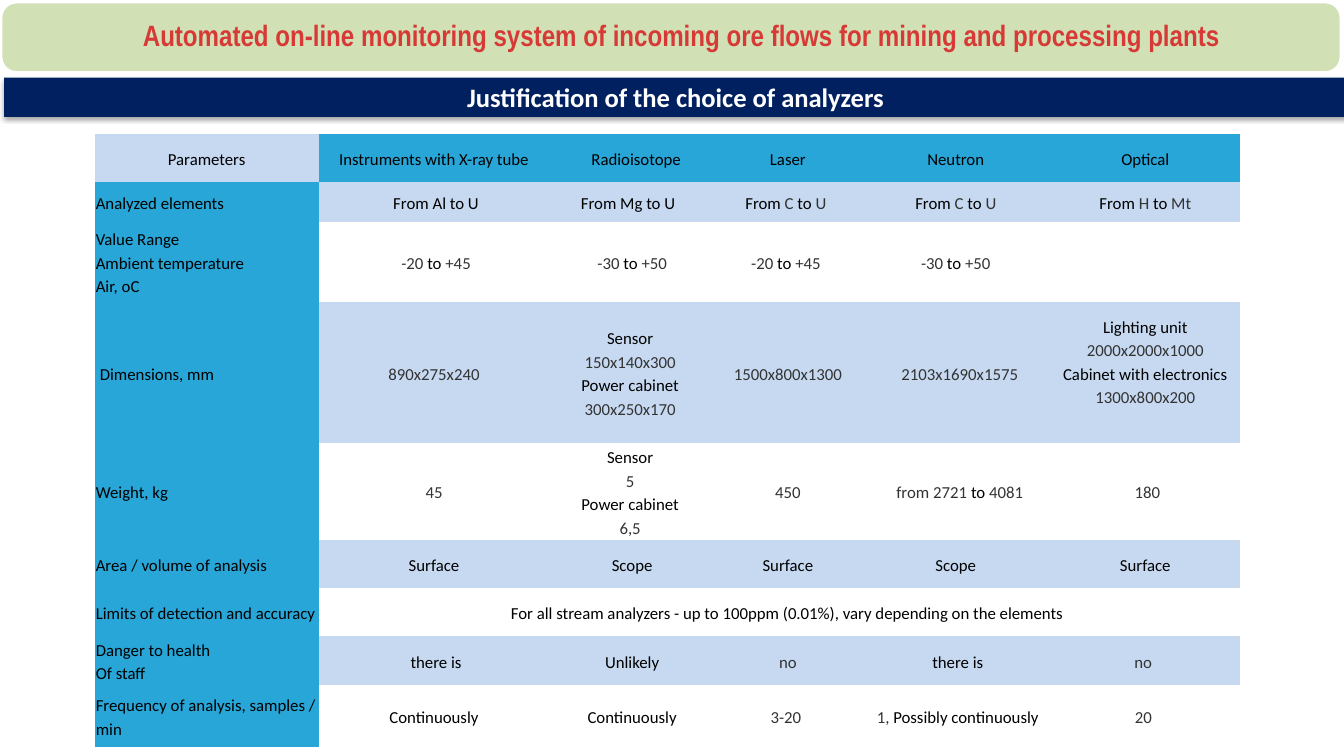
from lxml import etree
from pptx import Presentation
from pptx.dml.color import RGBColor
from pptx.enum.shapes import MSO_SHAPE
from pptx.enum.text import MSO_ANCHOR, PP_ALIGN
from pptx.oxml.ns import qn
from pptx.util import Inches, Pt

RECT, ROUND = MSO_SHAPE.RECTANGLE, MSO_SHAPE.ROUNDED_RECTANGLE
MIDDLE = MSO_ANCHOR.MIDDLE
LEFT, CENTER = PP_ALIGN.LEFT, PP_ALIGN.CENTER
NO_GRID = "{2D5ABB26-0587-4C30-8999-92F81FD0307C}"
COLORS = {
    "navy": "002060", "green": "D2E1B5", "red": "D73A36", "white": "FFFFFF",
    "blue": "28A6D7", "pale": "C6D9F1", "black": "000000", "grey": "333333",
}


def paint(fill, name):
    fill.solid()
    fill.fore_color.rgb = RGBColor.from_string(COLORS[name])


def add_run(para, text, size, color, font="Calibri", bold=False):
    run = para.add_run()
    run.text = text
    run.font.size, run.font.name, run.font.bold = Pt(size), font, bold
    run.font.color.rgb = RGBColor.from_string(COLORS[color])


prs = Presentation()
prs.slide_width, prs.slide_height = Inches(13.33), Inches(7.5)
slide = prs.slides.add_slide(prs.slide_layouts[5])
shapes = slide.shapes

# Section bar with a soft shadow below it
bar = shapes.add_shape(RECT, Inches(0.04), Inches(0.77), Inches(13.32), Inches(0.39))
bar.shadow.inherit = False
paint(bar.fill, "navy")
bar.line.fill.background()
glow = etree.SubElement(bar.element.spPr.find(qn("a:effectLst")), qn("a:outerShdw"),
                        blurRad=str(Pt(3.1)), dist=str(Pt(1.8)), dir="5400000",
                        rotWithShape="0")
tint = etree.SubElement(glow, qn("a:srgbClr"), val=COLORS["black"])
etree.SubElement(tint, qn("a:alpha"), val="35000")
frame = bar.text_frame
frame.word_wrap, frame.vertical_anchor = True, MIDDLE
frame.margin_top = frame.margin_bottom = Inches(0.06)
frame.paragraphs[0].alignment = CENTER
add_run(frame.paragraphs[0], "Justification of the choice of analyzers", 19, "white", bold=True)

# Title on its rounded banner
box = Inches(0.01), Inches(0.02), Inches(13.29), Inches(0.7)
banner = shapes.add_shape(ROUND, *box)
banner.adjustments[0] = 0.22
banner.shadow.inherit = False
paint(banner.fill, "green")
paint(banner.line.fill, "white")
banner.line.width = Pt(2)

title = shapes.title
banner.element.addnext(title.element)
title.left, title.top, title.width, title.height = box
frame = title.text_frame
frame.word_wrap, frame.vertical_anchor = True, MIDDLE
frame.margin_left = Inches(0.33)
frame.margin_top = frame.margin_right = frame.margin_bottom = Inches(0.12)
para = frame.paragraphs[0]
para.alignment, para.line_spacing = CENTER, 0.9
add_run(para, "Automated on-line monitoring system of incoming ore flows "
        "for mining and processing plants", 21, "red", "Arial Narrow", True)

# Table text: *grey* words stand between stars,
# and each outer underscore widens that side's cell margin by one step
STEP = 0.04
WIDTHS = [2.22, 2.29, 1.6, 1.49, 1.88, 1.88]
HEIGHTS = [0.48, 0.39, 0.8, 1.4, 0.94, 0.48, 0.48, 0.48, 0.61]
ROWS = [
    ["Parameters", "Instruments with X-ray tube", "___Radioisotope", "_Laser",
     "Neutron", "Optical"],
    ["Analyzed elements", "_From Al to U", "From Mg to U_", "From *C *to *U*",
     "From *C *to *U*", "From *H *to *Mt*"],
    ["Value Range\nAmbient temperature\nAir, oC", "_*-20 *to *+45*",
     "_*-30 *to *+50*", "_*-20 *to *+45*_", "_*-30 *to *+50*_", ""],
    ["_Dimensions, mm", "*890x275x240*",
     "Sensor\n*150х140х300\n*Power cabinet\n*300х250х170*",
     "_*1500x800x1300*", "__*2103х1690х1575*",
     "Lighting unit\n*2000x2000x1000\n*Cabinet with electronics\n*1300х800х200*"],
    ["Weight, kg", "*45*", "Sensor\n*5\n*Power cabinet\n*6,5*", "_*450*",
     "__*from 2721 *to *4081*", "_*180*"],
    ["Area / volume of analysis", "Surface", "_Scope", "_Surface", "Scope", "Surface"],
    ["Limits of detection and accuracy",
     "____For all stream analyzers - up to 100ppm (0.01%), vary depending on the elements"],
    ["Danger to health\nOf staff", "_there is", "_Unlikely", "_*no*", "_there is", "*no*_"],
    ["Frequency of analysis, samples / min", "Continuously", "_Continuously",
     "_*3-20*_", "_*1,* Possibly continuously", "*20*_"],
]
grid = shapes.add_table(len(ROWS), len(WIDTHS), Inches(0.94), Inches(1.33),
                        Inches(sum(WIDTHS)), Inches(sum(HEIGHTS)))
next(grid.element.iter(qn("a:tableStyleId"))).text = NO_GRID
table = grid.table
for col, width in zip(table.columns, WIDTHS):
    col.width = Inches(width)
for row, height in zip(table.rows, HEIGHTS):
    row.height = Inches(height)

for r, texts in enumerate(ROWS):
    if len(texts) < len(WIDTHS):
        table.cell(r, 1).merge(table.cell(r, len(WIDTHS) - 1))
    for c, text in enumerate(texts):
        cell = table.cell(r, c)
        if (r == 0) != (c == 0):
            paint(cell.fill, "blue")
        elif r % 2 or r == 0:
            paint(cell.fill, "pale")
        else:
            cell.fill.background()
        cell.vertical_anchor = MIDDLE
        before = len(text) - len(text.lstrip("_"))
        after = len(text) - len(text.rstrip("_"))
        cell.margin_left = Inches(0.01 + STEP * before)
        cell.margin_right = Inches(0.01 + STEP * after)
        cell.margin_top = cell.margin_bottom = Inches(0.01)
        para = cell.text_frame.paragraphs[0]
        para.alignment = LEFT if c == 0 and r else CENTER
        para.line_spacing = 1.15
        para.font.size = Pt(12)
        for i, part in enumerate(text.strip("_").split("*")):
            for j, line in enumerate(part.split("\n")):
                if j:
                    para.add_line_break()
                if line:
                    add_run(para, line, 12, "grey" if i % 2 else "black")

# The lighting unit's sizes sit one line above the middle
table.cell(3, 5).margin_bottom = Inches(0.24)

prs.save("out.pptx")
